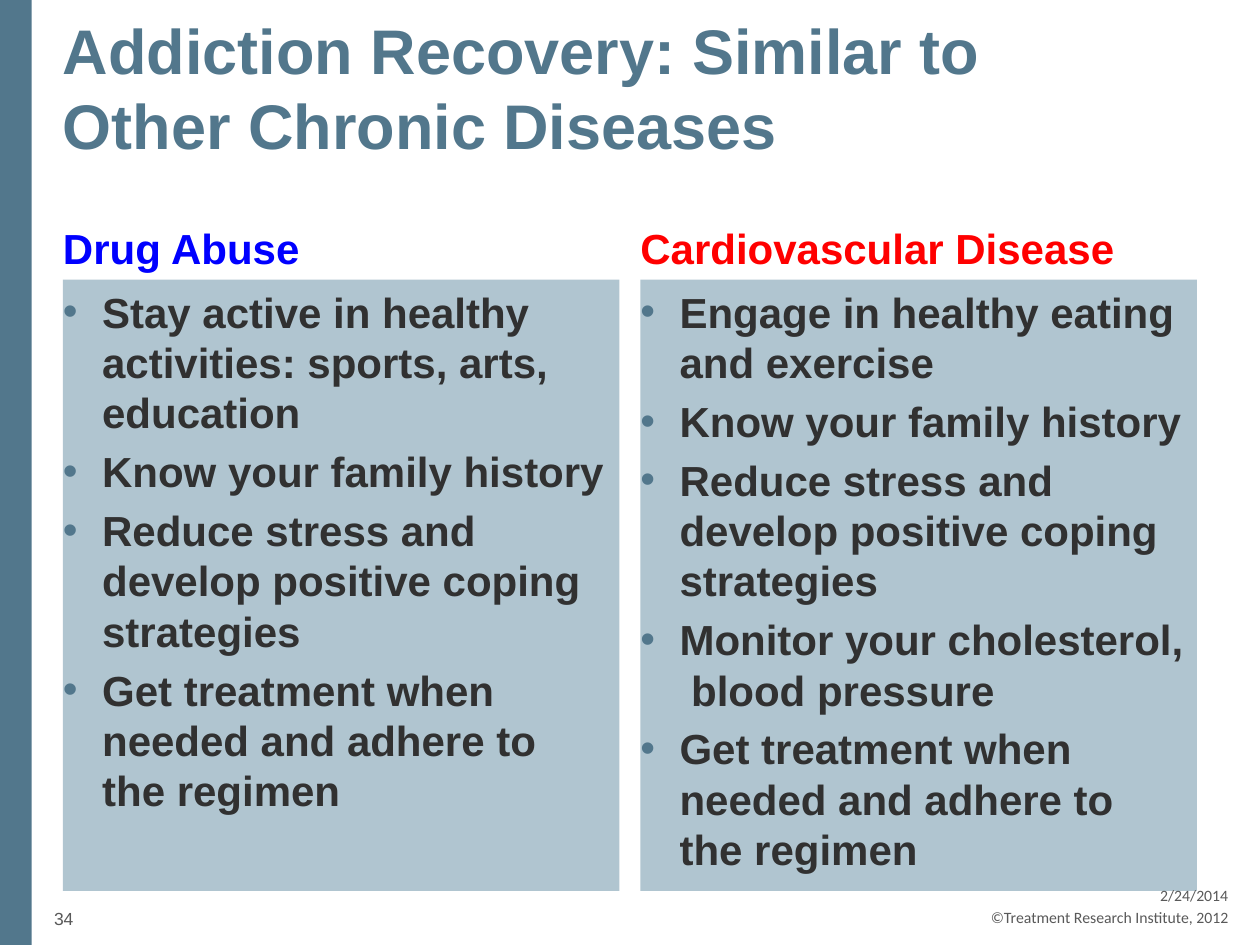
from pptx import Presentation
from pptx.dml.color import RGBColor
from pptx.enum.shapes import MSO_SHAPE
from pptx.enum.text import MSO_ANCHOR, PP_ALIGN
from pptx.oxml import parse_xml
from pptx.oxml.ns import nsdecls
from pptx.util import Cm, Pt

RECT = MSO_SHAPE.RECTANGLE
TOP, MID, LOW = MSO_ANCHOR.TOP, MSO_ANCHOR.MIDDLE, MSO_ANCHOR.BOTTOM
LEFT, RIGHT = PP_ALIGN.LEFT, PP_ALIGN.RIGHT

STEEL = RGBColor(0x52, 0x77, 0x8C)
PALE = RGBColor(0xB0, 0xC5, 0xD0)
DARK = RGBColor(0x31, 0x31, 0x31)
GRAY = RGBColor(0x59, 0x59, 0x59)
BLUE = RGBColor(0, 0, 0xFF)
RED = RGBColor(0xFF, 0, 0)

BODY = (0, 0.13, 0.25, 0.13)
FLAT = (0, 0, 0, 0)
SIDES = ("margin_left", "margin_top", "margin_right", "margin_bottom")

TITLE = {"name": "Arial", "size": Pt(36), "bold": True}
HEAD = {"name": "Arial", "size": Pt(24), "bold": True}
FOOT = {"name": "Calibri", "size": Pt(9)}
PAGE = {"name": "Arial", "size": Pt(10)}

COLS = [
    ("Drug Abuse", BLUE, [
        "Stay active in healthy activities: sports, arts, education",
        "Know your family history",
        "Reduce stress and develop positive coping strategies",
        "Get treatment when needed and adhere to the regimen",
    ]),
    ("Cardiovascular Disease", RED, [
        "Engage in healthy eating and exercise",
        "Know your family history",
        "Reduce stress and develop positive coping strategies",
        "Monitor your cholesterol,  blood pressure",
        "Get treatment when needed and adhere to the regimen",
    ]),
]


def add_rect(slide, box, color):
    rect = slide.shapes.add_shape(RECT, *map(Cm, box))
    rect.shadow.inherit = False
    rect.fill.solid()
    rect.fill.fore_color.rgb = color
    rect.line.fill.background()
    return rect


def add_bullet(para):
    props = para._p.get_or_add_pPr()
    props.set("marL", str(Cm(0.79)))
    props.set("indent", str(-Cm(0.79)))
    ns = nsdecls("a")
    props.append(parse_xml(f'<a:buClr {ns}><a:srgbClr val="{STEEL}"/></a:buClr>'))
    props.append(parse_xml(f'<a:buFont {ns} typeface="Arial"/>'))
    props.append(parse_xml(f'<a:buChar {ns} char="•"/>'))


def write(shape, lines, form, color, inset=BODY, anchor=TOP, align=LEFT,
          bullet=False):
    frame = shape.text_frame
    frame.word_wrap = True
    frame.vertical_anchor = anchor
    for side, size in zip(SIDES, inset):
        setattr(frame, side, Cm(size))
    for num, line in enumerate(lines):
        para = frame.add_paragraph() if num else frame.paragraphs[0]
        para.text = line
        if bullet:
            add_bullet(para)
        para.alignment = align
        para.space_before = Pt(4.8 if num else 0)
        for run in para.runs:
            for key, value in form.items():
                setattr(run.font, key, value)
            run.font.color.rgb = color


def add_text(slide, box, text, form, color, **opts):
    shape = slide.shapes.add_textbox(*map(Cm, box))
    write(shape, [text], form, color, **opts)


def add_foot(slide, x, y, wide):
    # Date above the copyright line, page number at the left
    right = x + wide - 8.05
    for drop, text in ((0.43, "©Treatment Research Institute, 2012"),
                       (0, "2/24/2014")):
        add_text(slide, (right, y + drop, 8.05, 0.56), text, FOOT, GRAY,
                 inset=FLAT, align=RIGHT)
    add_text(slide, (x, y + 0.15, 5.92, 1.02), "34", PAGE, GRAY,
             inset=(0.25, 0.13, 0.25, 0.13), anchor=MID)


def add_col(slide, x, y, wide, high, head, color, items):
    # Heading that sits on a filled list panel
    top = 1.78
    add_text(slide, (x, y, wide, top), head, HEAD, color, anchor=LOW)
    panel = add_rect(slide, (x, y + top, wide, high - top), PALE)
    write(panel, items, HEAD, DARK, bullet=True)


def main():
    deck = Presentation()
    deck.slide_width, deck.slide_height = Cm(25.4), Cm(19.05)
    slide = deck.slides.add_slide(deck.slide_layouts[6])

    # Side band and title
    add_rect(slide, (0, 0, 0.64, 19.05), STEEL)
    add_text(slide, (1.27, 0.76, 22.86, 1.98),
             "Addiction Recovery: Similar to \vOther Chronic Diseases",
             TITLE, STEEL, anchor=MID)

    # Two columns, aligned with the title's edges
    wide, gap = 11.22, 0.42
    for num, col in enumerate(COLS):
        add_col(slide, 1.27 + num * (wide + gap), 3.86, wide, 14.1, *col)

    add_foot(slide, 0.84, 17.86, 23.92)
    deck.save("out.pptx")


if __name__ == "__main__":
    main()
